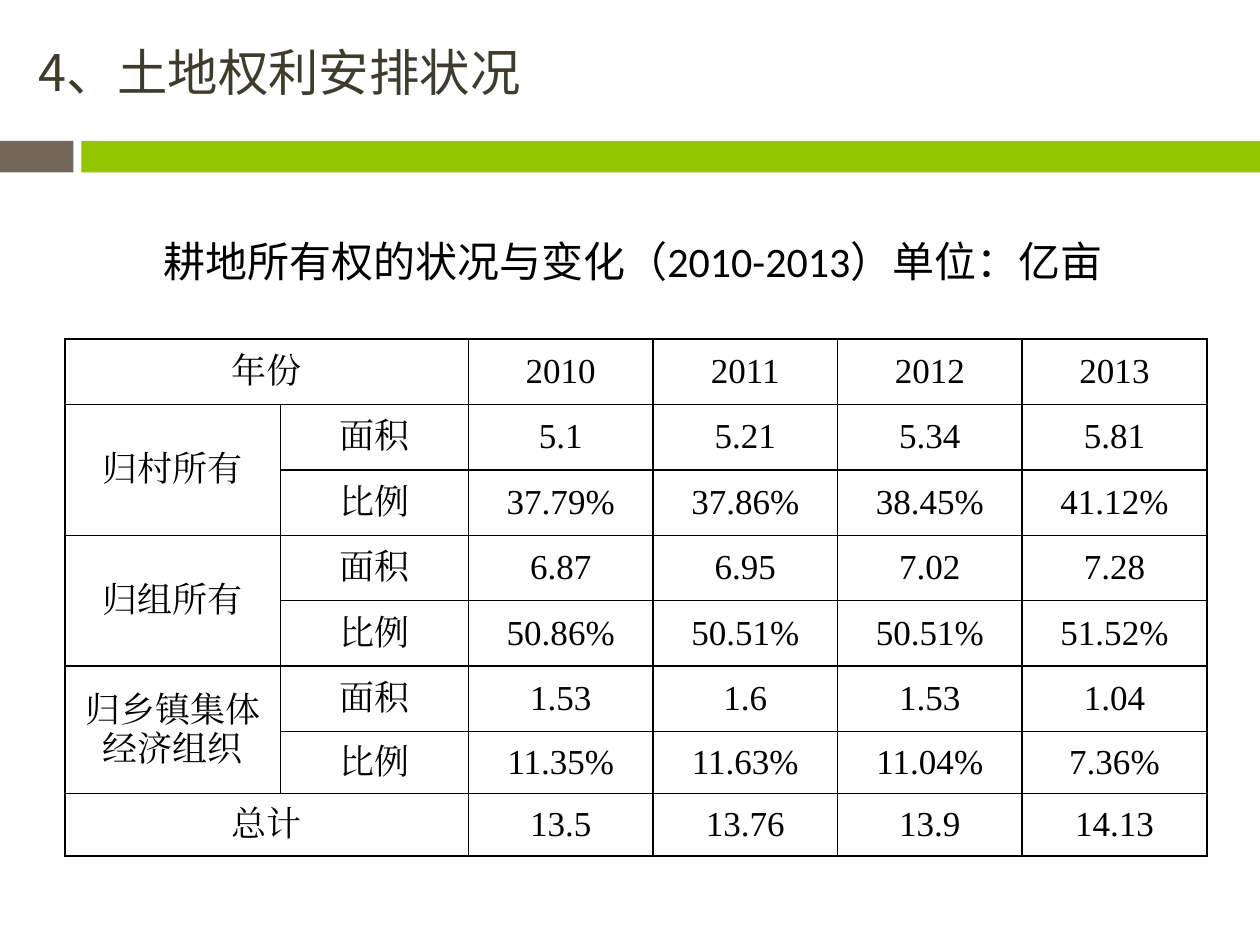
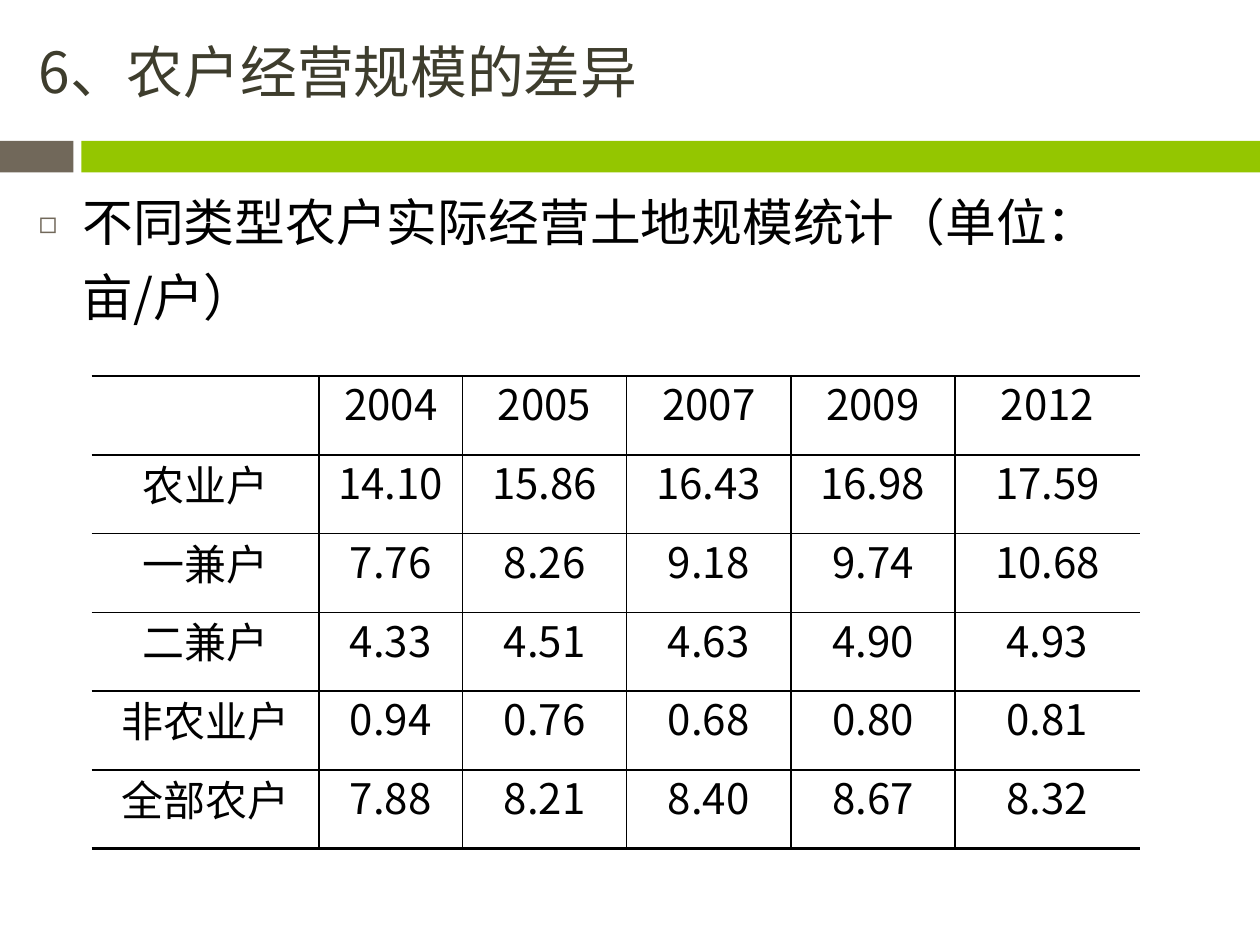
from lxml.etree import SubElement
from pptx import Presentation
from pptx.dml.color import RGBColor
from pptx.enum.shapes import MSO_SHAPE as Shape
from pptx.enum.text import MSO_ANCHOR as Anchor, PP_ALIGN as Align
from pptx.oxml.ns import qn
from pptx.util import Pt

INK = RGBColor(0x00, 0x00, 0x00)
TITLE_INK = RGBColor(0x3E, 0x3D, 0x2D)
TAUPE = RGBColor(0x71, 0x68, 0x5A)
GREEN = RGBColor(0x94, 0xC6, 0x00)
SANS, SERIF, LATIN, LABEL = "Noto Sans CJK SC", "Times New Roman", "Calibri", "Karla"
EDGES = {"left": "a:lnL", "right": "a:lnR", "top": "a:lnT", "bottom": "a:lnB"}

OWNERSHIP = [
    ["年份", "", "2010", "2011", "2012", "2013"],
    ["归村所有", "面积", "5.1", "5.21", "5.34", "5.81"],
    ["", "比例", "37.79%", "37.86%", "38.45%", "41.12%"],
    ["归组所有", "面积", "6.87", "6.95", "7.02", "7.28"],
    ["", "比例", "50.86%", "50.51%", "50.51%", "51.52%"],
    ["归乡镇集体经济组织", "面积", "1.53", "1.6", "1.53", "1.04"],
    ["", "比例", "11.35%", "11.63%", "11.04%", "7.36%"],
    ["总计", "", "13.5", "13.76", "13.9", "14.13"],
]
OWNERSHIP_MERGES = [((0, 0), (0, 1)), ((1, 0), (2, 0)), ((3, 0), (4, 0)),
                    ((5, 0), (6, 0)), ((7, 0), (7, 1))]
FARM_SIZE = [
    ["", "2004", "2005", "2007", "2009", "2012"],
    ["农业户", "14.10", "15.86", "16.43", "16.98", "17.59"],
    ["一兼户", "7.76", "8.26", "9.18", "9.74", "10.68"],
    ["二兼户", "4.33", "4.51", "4.63", "4.90", "4.93"],
    ["非农业户", "0.94", "0.76", "0.68", "0.80", "0.81"],
    ["全部农户", "7.88", "8.21", "8.40", "8.67", "8.32"],
]


def apply(target, values):
    for name, value in values.items():
        setattr(target, name, value)


class SlideBuilder:
    """Holds the shared style and the current slide, and adds elements to it."""

    def __init__(self):
        self.deck = Presentation()
        apply(self.deck, {"slide_width": Pt(720), "slide_height": Pt(540)})
        self.page = None

    def start(self, title, size):
        self.page = self.deck.slides.add_slide(self.deck.slide_layouts[5])
        self.band(0, 42, TAUPE)
        self.band(46.5, 673.5, GREEN)
        box = self.page.shapes.title
        apply(box, {"left": Pt(15), "top": Pt(18), "width": Pt(675), "height": Pt(45)})
        apply(box.text_frame, {"vertical_anchor": Anchor.MIDDLE, "word_wrap": True})
        para = box.text_frame.paragraphs[0]
        para.alignment = Align.LEFT
        self.span(para, title, size, SANS, TITLE_INK)

    def band(self, left, width, color):
        bar = self.page.shapes.add_shape(Shape.RECTANGLE, Pt(left), Pt(80.5), Pt(width), Pt(18))
        bar.shadow.inherit = False
        bar.fill.solid()
        bar.fill.fore_color.rgb = color
        bar.line.fill.background()

    def span(self, para, text, size, face, color=INK):
        span = para.add_run()
        span.text = text
        apply(span.font, {"size": Pt(size), "name": face, "bold": False})
        span.font.color.rgb = color
        SubElement(span.font._element, qn("a:ea"), typeface=face)

    def text(self, left, top, width, height, spans, size, indent, anchor=Anchor.TOP,
             **para_format):
        box = self.page.shapes.add_textbox(Pt(left), Pt(top), Pt(width), Pt(height))
        apply(box.text_frame, {"word_wrap": True, "vertical_anchor": anchor})
        para = box.text_frame.paragraphs[0]
        apply(para, para_format)
        margin, first = indent
        properties = para._p.get_or_add_pPr()
        properties.set("marL", str(Pt(margin)))
        properties.set("indent", str(Pt(first)))
        for words, face in spans:
            self.span(para, words, size, face)
        return para

    def bullet(self, para, symbol, color, percent):
        properties = para._p.get_or_add_pPr()
        SubElement(SubElement(properties, qn("a:buClr")), qn("a:srgbClr"), val=str(color))
        SubElement(properties, qn("a:buSzPct"), val=str(percent * 1000))
        SubElement(properties, qn("a:buFont"), typeface=SANS)
        SubElement(properties, qn("a:buChar"), char=symbol)

    def borders(self, cell, widths):
        properties = cell._tc.get_or_add_tcPr()
        for edge, tag in EDGES.items():
            width = widths[edge]
            line = SubElement(properties, qn(tag), w=str(Pt(width)))
            if width:
                fill = SubElement(line, qn("a:solidFill"))
                SubElement(fill, qn("a:srgbClr"), val=str(INK))
            else:
                SubElement(line, qn("a:noFill"))

    def table(self, left, top, columns, heights, rows, size, faces, side=1, rim=1,
              merges=(), **para_format):
        frame = self.page.shapes.add_table(len(rows), len(columns), Pt(left), Pt(top),
                                           Pt(sum(columns)), Pt(sum(heights)))
        grid = frame.table
        apply(grid, {"first_row": False, "horz_banding": False})
        for column, width in zip(grid.columns, columns):
            column.width = Pt(width)
        for row, height in zip(grid.rows, heights):
            row.height = Pt(height)
        last_row, last_column = len(rows) - 1, len(columns) - 1
        for r, values in enumerate(rows):
            for c, value in enumerate(values):
                cell = grid.cell(r, c)
                apply(cell, {"vertical_anchor": Anchor.MIDDLE, "margin_left": Pt(5),
                             "margin_right": Pt(5), "margin_top": 0, "margin_bottom": 0})
                self.borders(cell, {"left": 1 if c else side,
                                    "right": 1 if c < last_column else side,
                                    "top": 1 if r else rim,
                                    "bottom": 1 if r < last_row else rim})
                cell.fill.background()
                para = cell.text_frame.paragraphs[0]
                apply(para, {"alignment": Align.CENTER, **para_format})
                if value:
                    self.span(para, value, size, faces[min(c, 1)])
        for first, last in merges:
            grid.cell(*first).merge(grid.cell(*last))


def main():
    builder = SlideBuilder()

    builder.start("4、土地权利安排状况", 28.8)
    builder.table(37.2, 193.7, [123, 107.5] + [105.5] * 4, [37.4] * 6 + [35.5] * 2,
                  OWNERSHIP, 20, (SERIF, SERIF), merges=OWNERSHIP_MERGES)
    builder.text(37.5, 131, 620.5, 36,
                 [("耕地所有权的状况与变化（", SANS), ("2010-2013", LATIN), ("）单位：亿亩", SANS)],
                 24, (0, 28), Anchor.MIDDLE, alignment=Align.CENTER)

    builder.start("6、农户经营规模的差异", 32.4)
    para = builder.text(15, 98, 675, 382,
                        [("不同类型农户实际经营土地规模统计（单位：亩/户）", SANS)],
                        29, (25, -25), line_spacing=1.22, space_before=Pt(7))
    builder.bullet(para, "◻", TAUPE, 60)
    builder.table(52.3, 215, [130, 82] + [93.8] * 3 + [105.8], [45] * 6,
                  FARM_SIZE, 24, (LABEL, SANS), side=0, rim=1.5,
                  line_spacing=Pt(20), space_after=Pt(10))

    builder.deck.save("out.pptx")


if __name__ == "__main__":
    main()
